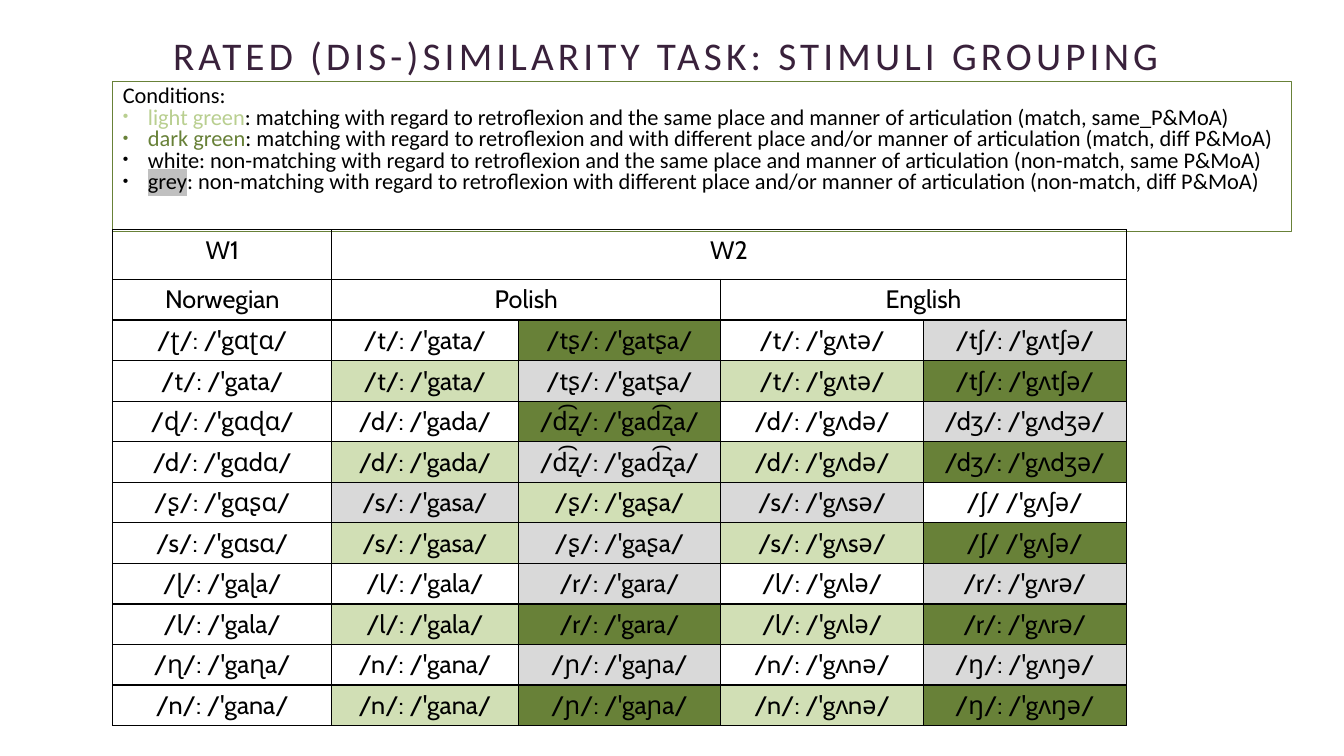
from dataclasses import dataclass

from lxml.etree import SubElement
from pptx import Presentation
from pptx.dml.color import RGBColor
from pptx.enum.shapes import MSO_SHAPE
from pptx.enum.text import MSO_ANCHOR, PP_ALIGN
from pptx.oxml.ns import qn
from pptx.util import Inches, Pt


@dataclass(frozen=True)
class Theme:
    black: str = "000000"
    white: str = "FFFFFF"
    plum: str = "39213B"
    light_green: str = "D1DFB5"
    light_green_text: str = "B9CF90"
    dark_green: str = "688138"
    grey: str = "D9D9D9"
    grey_highlight: str = "C0C0C0"
    prose_font: str = "Calibri"
    table_font: str = "Cabin"
    title_size: int = 28
    conditions_size: int = 16
    table_size: int = 18


THEME = Theme()
SLIDE_WIDTH, SLIDE_HEIGHT = Inches(13.33), Inches(7.5)

# Boxes: left, top, width, height as percentages of the slide
TITLE_BOX = (11.1, 2.67, 77.87, 8.4)
CONDITIONS_BOX = (8.4, 10.8, 87.7, 19.87)
STIMULI_BOX = (8.4, 30.4, 75.4, 65.6)

# Condition label, label colour, highlight, explanation
CONDITIONS = [
    ("light green", THEME.light_green_text, None,
     ": matching with regard to retroflexion and the same place and manner of articulation (match, same_P&MoA)"),
    ("dark green", THEME.dark_green, None,
     ": matching with regard to retroflexion and with different place and/or manner of articulation "
     "(match, diff P&MoA)"),
    ("white", THEME.black, None,
     ": non-matching with regard to retroflexion and the same place and manner of articulation "
     "(non-match, same P&MoA)"),
    ("grey", THEME.black, THEME.grey_highlight,
     ": non-matching with regard to retroflexion with different place and/or manner of articulation "
     "(non-match, diff P&MoA)"),
]

# Each group: two Norwegian words with their condition codes, then the shared W2 words
STIMULI = [
    ([("/ʈ/: /'gɑʈɑ/", "WDWG"), ("/t/: /'gata/", "LGLD")],
     ["/t/: /'gata/", "/tʂ/: /'gatʂa/", "/t/: /'gʌtə/", "/tʃ/: /'gʌtʃə/"]),
    ([("/ɖ/: /'gɑɖɑ/", "WDWG"), ("/d/: /'gɑdɑ/", "LGLD")],
     ["/d/: /'gada/", "/d͡ʐ/: /'gad͡ʐa/", "/d/: /'gʌdə/", "/dʒ/: /'gʌdʒə/"]),
    ([("/ʂ/: /'gɑʂɑ/", "GLGW"), ("/s/: /'gɑsɑ/", "LGLD")],
     ["/s/: /'gasa/", "/ʂ/: /'gaʂa/", "/s/: /'gʌsə/", "/ʃ/ /'gʌʃə/"]),
    ([("/ɭ/: /'gaɭa/", "WGWG"), ("/l/: /'gala/", "LDLD")],
     ["/l/: /'gala/", "/r/: /'gara/", "/l/: /'gʌlə/", "/r/: /'gʌrə/"]),
    ([("/ɳ/: /'gaɳa/", "WGWG"), ("/n/: /'gana/", "LDLD")],
     ["/n/: /'gana/", "/ɲ/: /'gaɲa/", "/n/: /'gʌnə/", "/ŋ/: /'gʌŋə/"]),
]
CONDITION_FILLS = {"W": THEME.white, "L": THEME.light_green,
                   "D": THEME.dark_green, "G": THEME.grey}

# Header cells: row, first column, last column, label
HEADERS = [(0, 0, 0, "W1"), (0, 1, 4, "W2"),
           (1, 0, 0, "Norwegian"), (1, 1, 2, "Polish"), (1, 3, 4, "English")]
COLUMN_WEIGHTS = [2.17, 1.85, 2.01, 2.01, 2.01]
ROW_WEIGHTS = [0.49] + [0.4] * 11


def place(box):
    extents = (SLIDE_WIDTH, SLIDE_HEIGHT) * 2
    return [int(extent * share / 100) for extent, share in zip(extents, box)]


def set_all(target, formats):
    for name, value in formats.items():
        setattr(target, name, value)


def add_run(paragraph, text, font, size, color):
    run = paragraph.add_run()
    run.text = text
    set_all(run.font, {"name": font, "size": Pt(size)})
    run.font.color.rgb = RGBColor.from_string(color)
    return run._r.get_or_add_rPr()


def add_title(slide, box):
    frame = slide.shapes.add_textbox(*place(box)).text_frame
    set_all(frame, {"word_wrap": True, "vertical_anchor": MSO_ANCHOR.BOTTOM,
                    "margin_right": Inches(0.22)})
    heading = frame.paragraphs[0]
    set_all(heading, {"alignment": PP_ALIGN.CENTER, "line_spacing": 0.9})
    properties = add_run(heading, "RATED (DIS-)SIMILARITY TASK: STIMULI GROUPING",
                         THEME.prose_font, THEME.title_size, THEME.plum)
    properties.set("spc", "300")


def add_conditions(slide, box):
    panel = slide.shapes.add_shape(MSO_SHAPE.RECTANGLE, *place(box))
    panel.shadow.inherit = False
    panel.fill.solid()
    panel.fill.fore_color.rgb = RGBColor.from_string(THEME.white)
    panel.line.color.rgb = RGBColor.from_string(THEME.dark_green)
    panel.line.width = Pt(0.75)
    frame = panel.text_frame
    set_all(frame, {"word_wrap": True, "vertical_anchor": MSO_ANCHOR.TOP})
    style = (THEME.prose_font, THEME.conditions_size)
    layout = {"alignment": PP_ALIGN.LEFT, "line_spacing": 0.8,
              "space_before": Pt(0), "space_after": Pt(0)}

    heading = frame.paragraphs[0]
    set_all(heading, layout)
    add_run(heading, "Conditions:", *style, THEME.black)

    for label, color, highlight, explanation in CONDITIONS:
        condition = frame.add_paragraph()
        set_all(condition, layout)
        # Hanging bullet
        properties = condition._p.get_or_add_pPr()
        properties.set("marL", str(Inches(0.25)))
        properties.set("indent", str(-Inches(0.25)))
        SubElement(properties, qn("a:buSzPct"), val="70000")
        SubElement(properties, qn("a:buFont"), typeface="Arial")
        SubElement(properties, qn("a:buChar"), char="•")
        label_properties = add_run(condition, label, *style, color)
        if highlight:
            marker = SubElement(label_properties, qn("a:highlight"))
            SubElement(marker, qn("a:srgbClr"), val=highlight)
            label_properties.find(qn("a:solidFill")).addnext(marker)
        add_run(condition, explanation, *style, THEME.black)


def add_borders(cell):
    properties = cell._tc.get_or_add_tcPr()
    for position, side in enumerate(("a:lnL", "a:lnR", "a:lnT", "a:lnB")):
        border = SubElement(properties, qn(side), w=str(Pt(1)))
        SubElement(SubElement(border, qn("a:solidFill")), qn("a:srgbClr"), val=THEME.black)
        properties.insert(position, border)


def write_cell(cell, text):
    word = cell.text_frame.paragraphs[0]
    word.alignment = PP_ALIGN.CENTER
    add_run(word, text, THEME.table_font, THEME.table_size, THEME.black)


def add_stimuli(slide, box):
    left, top, width, height = place(box)
    stimuli = slide.shapes.add_table(len(ROW_WEIGHTS), len(COLUMN_WEIGHTS),
                                     left, top, width, height).table
    set_all(stimuli, {"first_row": False, "horz_banding": False})
    for column, weight in zip(stimuli.columns, COLUMN_WEIGHTS):
        column.width = int(width * weight / sum(COLUMN_WEIGHTS))
    for row, weight in zip(stimuli.rows, ROW_WEIGHTS):
        row.height = int(height * weight / sum(ROW_WEIGHTS))
    for cell in stimuli.iter_cells():
        cell.fill.background()
        add_borders(cell)

    # Language headers
    for row, first, last, label in HEADERS:
        header = stimuli.cell(row, first)
        if last > first:
            header.merge(stimuli.cell(row, last))
        write_cell(header, label)

    # Word pairs, coloured by condition
    pairings = [(norwegian, codes, others)
                for norwegian_words, others in STIMULI
                for norwegian, codes in norwegian_words]
    for row, (norwegian, codes, others) in enumerate(pairings, start=2):
        for column, (word, code) in enumerate(zip([norwegian] + others, "W" + codes)):
            cell = stimuli.cell(row, column)
            write_cell(cell, word)
            cell.fill.solid()
            cell.fill.fore_color.rgb = RGBColor.from_string(CONDITION_FILLS[code])


def main():
    deck = Presentation()
    set_all(deck, {"slide_width": SLIDE_WIDTH, "slide_height": SLIDE_HEIGHT})
    slide = deck.slides.add_slide(deck.slide_layouts[6])
    add_title(slide, TITLE_BOX)
    add_conditions(slide, CONDITIONS_BOX)
    add_stimuli(slide, STIMULI_BOX)
    deck.save("out.pptx")


if __name__ == "__main__":
    main()
